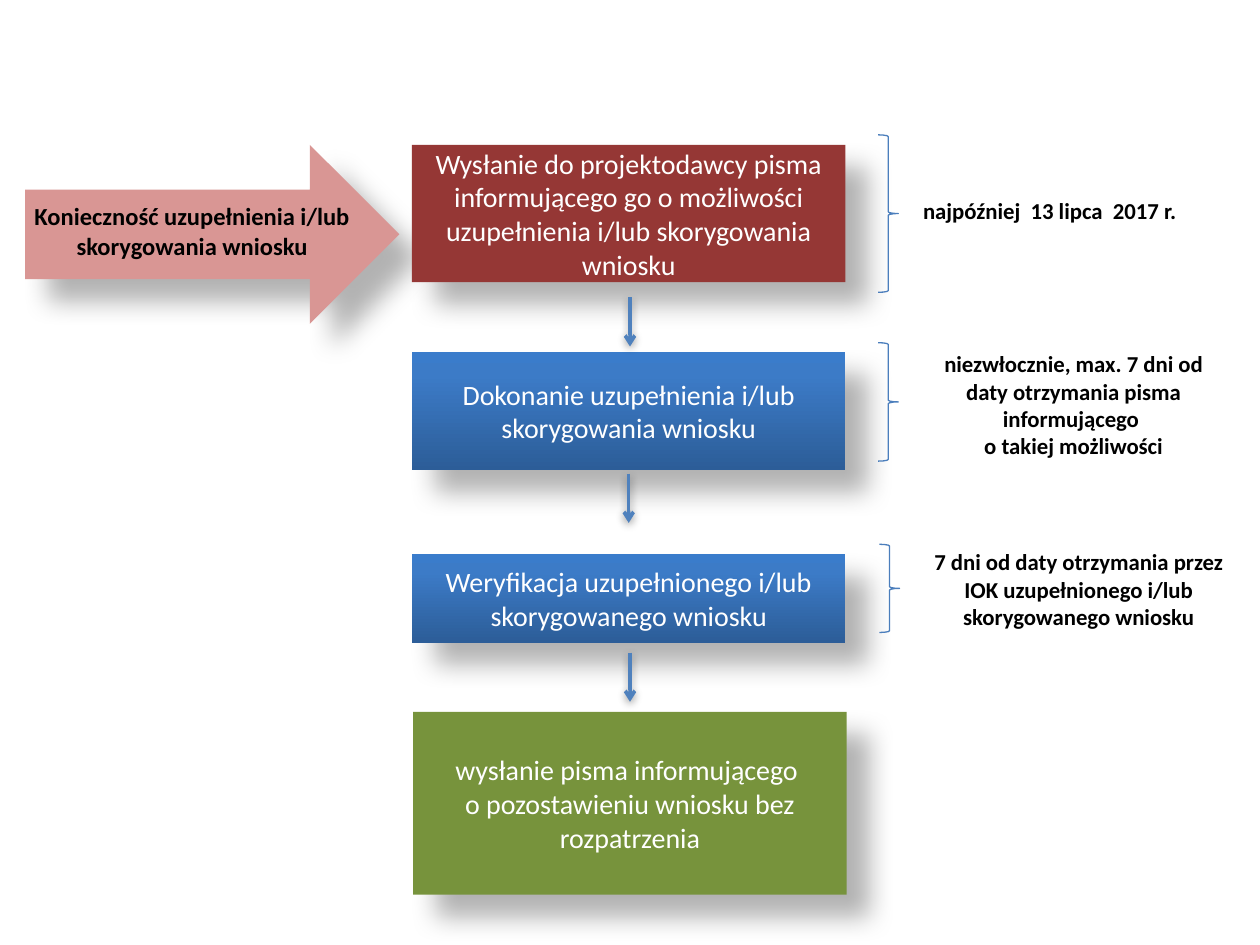
"""Build a flow slide on completing and correcting an application."""
from copy import deepcopy
from lxml.etree import SubElement
from pptx import Presentation
from pptx.dml.color import RGBColor
from pptx.enum.shapes import MSO_CONNECTOR, MSO_SHAPE
from pptx.enum.text import MSO_ANCHOR, PP_ALIGN
from pptx.oxml import parse_xml
from pptx.oxml.ns import nsdecls, qn
from pptx.util import Inches, Pt


def write(shape, text, size, color, bold=False):
    frame = shape.text_frame
    frame.word_wrap = True
    para = frame.paragraphs[0]
    para.text = text
    para.alignment = PP_ALIGN.CENTER
    para.font.name = "Calibri"
    para.font.size = Pt(size)
    para.font.bold = bold
    para.font.color.rgb = RGBColor.from_string(color)


def add_shadow(shape, opacity, blur, distance, angle):
    shape._element.spPr.append(parse_xml(
        f'<a:effectLst {nsdecls("a")}><a:outerShdw blurRad="{Pt(blur)}" dist="{Pt(distance)}" '
        f'dir="{angle * 60000}" algn="ctr" rotWithShape="0"><a:srgbClr val="000000">'
        f'<a:alpha val="{opacity * 1000}"/></a:srgbClr></a:outerShdw></a:effectLst>'))


deck = Presentation()
deck.slide_width, deck.slide_height = Inches(10), Inches(7.5)
page = deck.slides.add_slide(deck.slide_layouts[6])
shapes = page.shapes

start = shapes.add_shape(MSO_SHAPE.RIGHT_ARROW, Inches(0.2), Inches(1.15), Inches(2.97), Inches(1.42))
start.fill.solid()
start.fill.fore_color.rgb = RGBColor.from_string("D99694")
start.line.fill.background()
add_shadow(start, 30, 15, 18, 45)

BLUE_STOPS = [(0, "2C5D98"), (0.8, "3C7BC7"), (1, "3A7CCB")]
steps = [
    (3.27, 1.15, 1.09, "953735",
     "Wysłanie do projektodawcy pisma informującego go o możliwości uzupełnienia i/lub skorygowania wniosku"),
    (3.27, 2.79, 0.94, None, "Dokonanie uzupełnienia i/lub skorygowania wniosku"),
    (3.27, 4.4, 0.7, None, "Weryfikacja uzupełnionego i/lub skorygowanego wniosku"),
    (3.28, 5.65, 1.45, "77933C",
     "wysłanie pisma informującego \no pozostawieniu wniosku bez rozpatrzenia"),
]
for left, top, height, color, text in steps:
    step = shapes.add_shape(MSO_SHAPE.RECTANGLE, Inches(left), Inches(top), Inches(3.44), Inches(height))
    if color:
        step.fill.solid()
        step.fill.fore_color.rgb = RGBColor.from_string(color)
    else:
        step.fill.gradient()
        step.fill.gradient_angle = 90
        stop_list = step._element.spPr.find(".//" + qn("a:gsLst"))
        stop_list.append(deepcopy(stop_list[-1]))
        for stop, (position, stop_color) in zip(step.fill.gradient_stops, BLUE_STOPS):
            stop.position = position
            stop.color.rgb = RGBColor.from_string(stop_color)
    step.line.fill.background()
    add_shadow(step, 30, 15, 18, 45)
    step.text_frame.vertical_anchor = MSO_ANCHOR.MIDDLE
    write(step, text, 16, "FFFFFF")

for left, top, height in [(6.97, 1.07, 1.25), (6.97, 2.72, 0.94), (6.98, 4.32, 0.7)]:
    brace = shapes.add_shape(MSO_SHAPE.RIGHT_BRACE, Inches(left), Inches(top), Inches(0.16), Inches(height))
    brace.fill.background()
    brace.line.color.rgb = RGBColor.from_string("4B7EBC")
    brace.line.width = Pt(0.75)
    brace.shadow.inherit = False

labels = [
    (0.12, 1.55, 2.81, 0.57, 14, "Konieczność uzupełnienia i/lub skorygowania wniosku"),
    (7.13, 1.51, 2.4, 0.32, 13, "najpóźniej  13 lipca  2017 r."),
    (7.27, 2.73, 2.5, 0.98, 13,
     "niezwłocznie, max. 7 dni od daty otrzymania pisma informującego \no takiej możliwości"),
    (7.27, 4.3, 2.58, 0.76, 13,
     "7 dni od daty otrzymania przez IOK uzupełnionego i/lub skorygowanego wniosku"),
]
for left, top, width, height, size, text in labels:
    label = shapes.add_textbox(Inches(left), Inches(top), Inches(width), Inches(height))
    write(label, text, size, "000000", bold=True)

for x, top in [(5, 2.36), (4.99, 3.76), (5, 5.18)]:
    arrow = shapes.add_connector(
        MSO_CONNECTOR.STRAIGHT, Inches(x), Inches(top), Inches(x), Inches(top + 0.39))
    arrow.line.color.rgb = RGBColor.from_string("4F81BD")
    arrow.line.width = Pt(2)
    SubElement(arrow.line._get_or_add_ln(), qn("a:tailEnd"), type="arrow")
    add_shadow(arrow, 38, 5, 1.6, 90)

deck.save("out.pptx")
